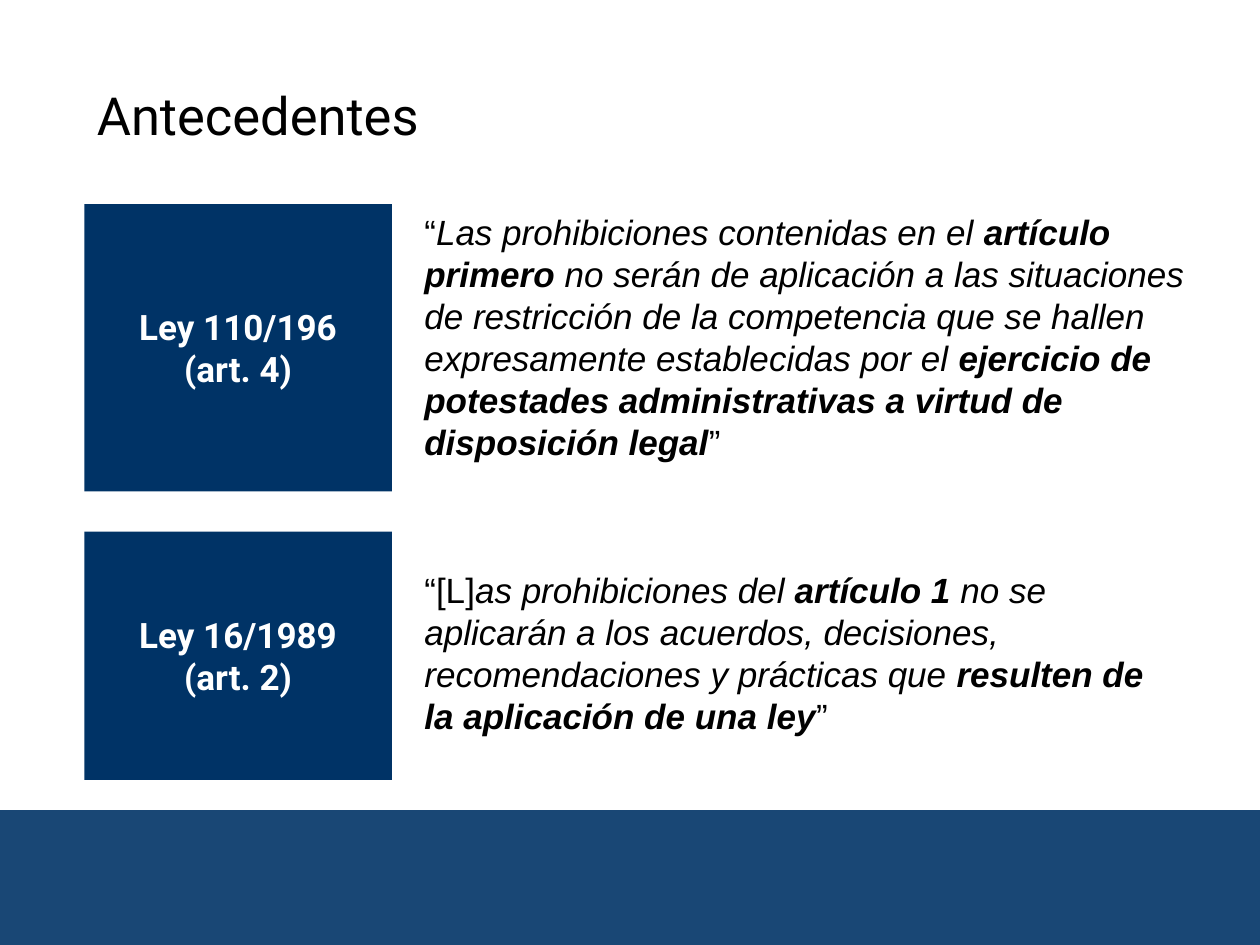
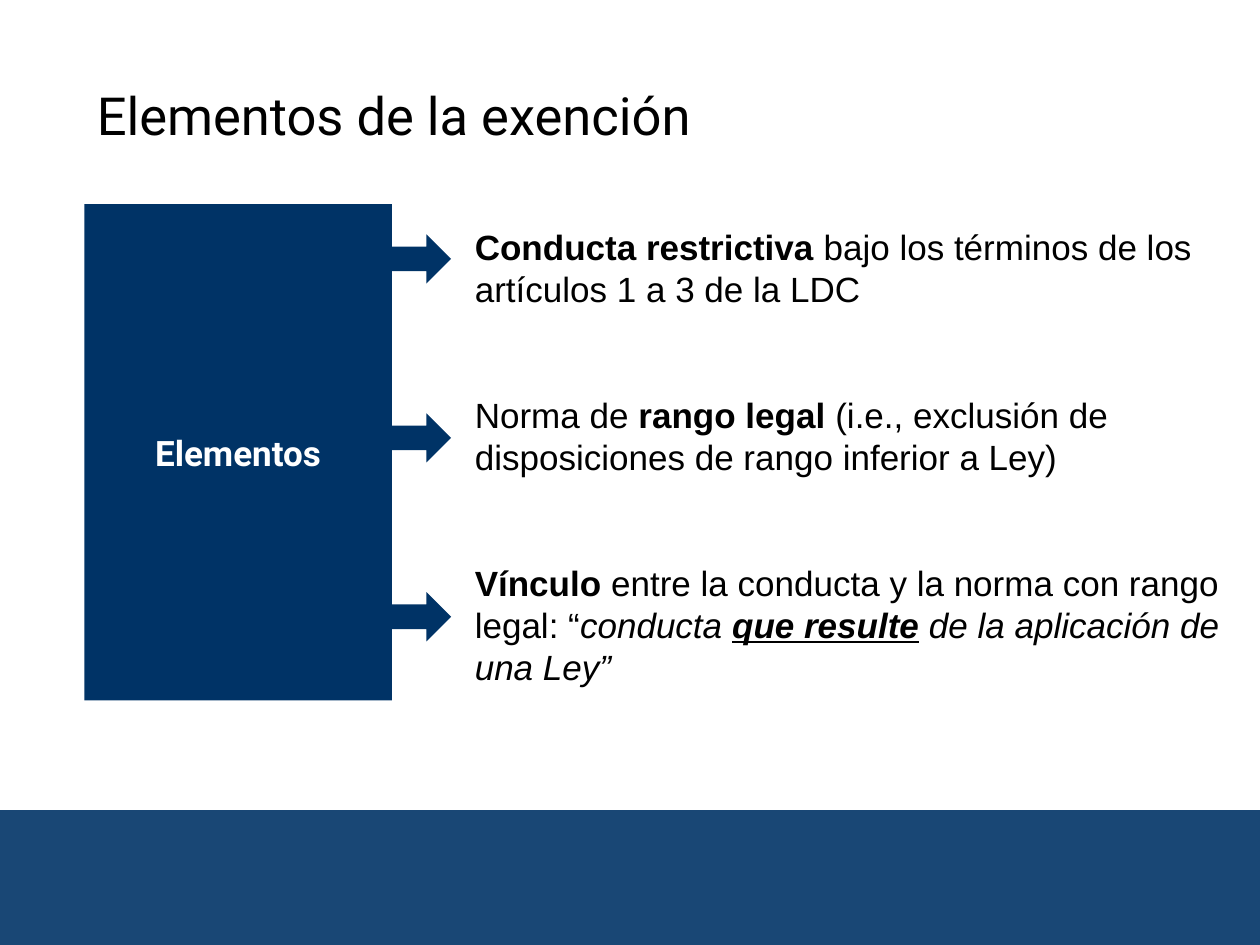
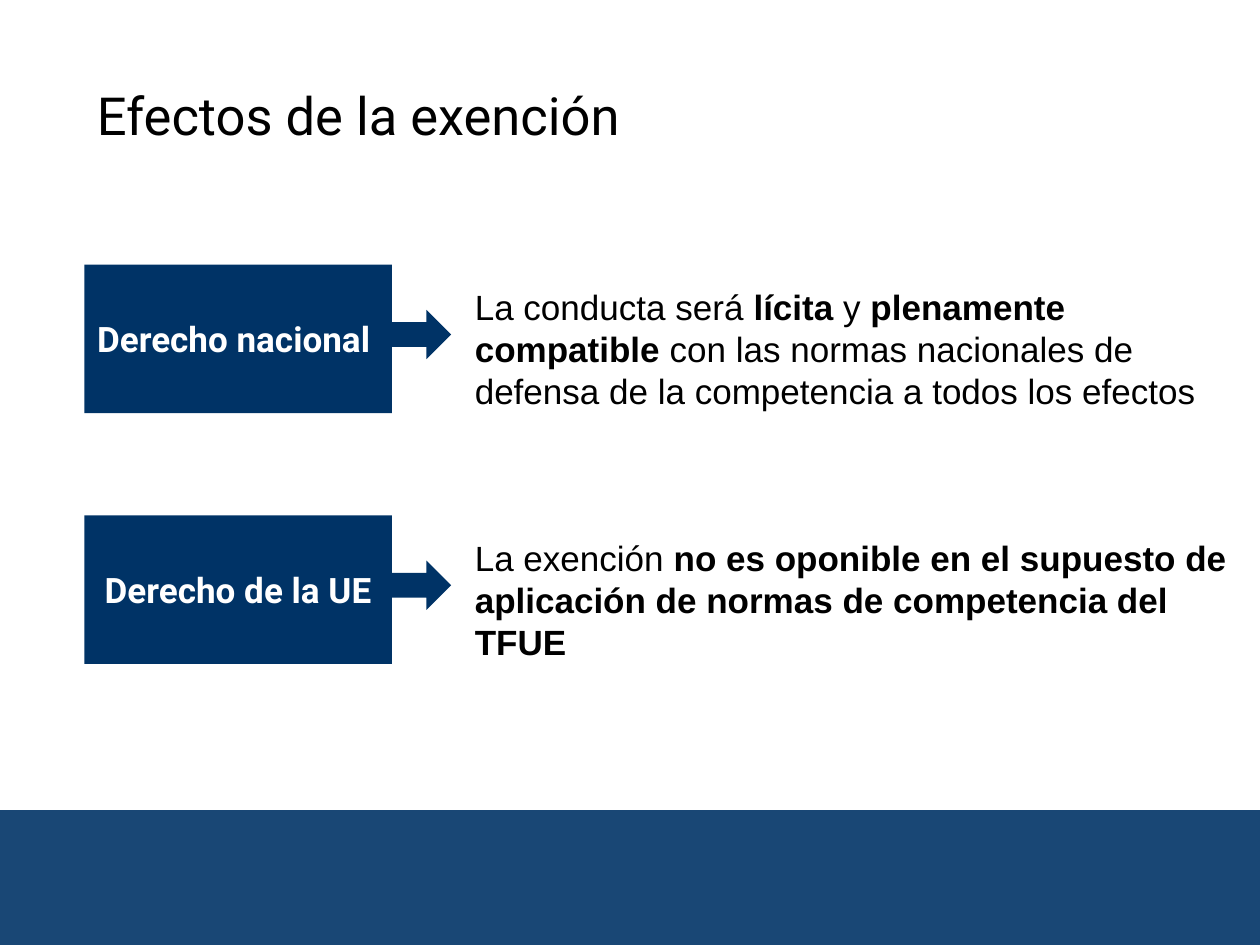
from lxml import etree
from pptx import Presentation
from pptx.dml.color import RGBColor
from pptx.enum.shapes import MSO_SHAPE
from pptx.enum.text import MSO_ANCHOR, MSO_AUTO_SIZE, PP_ALIGN
from pptx.oxml.ns import qn
from pptx.util import Inches, Pt

RECT = MSO_SHAPE.RECTANGLE
ARROW = MSO_SHAPE.RIGHT_ARROW
MIDDLE = MSO_ANCHOR.MIDDLE
GROW = MSO_AUTO_SIZE.SHAPE_TO_FIT_TEXT
LEFT, CENTER = PP_ALIGN.LEFT, PP_ALIGN.CENTER

NAVY, BLACK, WHITE = "003366", "000000", "FFFFFF"
HEAD, BODY = "Roboto", "Arial"
EDGE = 0.67      # left edge of titles and boxes
WIDE = 2.44      # box width
TEXT = 3.27      # left edge of the text column


def color(code):
    return RGBColor.from_string(code)


class Deck:
    def __init__(self):
        self.prs = Presentation()
        self.prs.slide_width = Inches(10)
        self.prs.slide_height = Inches(7.5)
        self.slide = None

    def page(self, title):
        """Start a slide with its band and title."""
        self.slide = self.prs.slides.add_slide(self.prs.slide_layouts[6])
        band = self.shape(RECT, 0, 6.43, 10, 1.07)
        fill = band.fill._xPr.find(qn("a:solidFill"))
        etree.SubElement(fill[0], qn("a:alpha")).set("val", "90000")
        frame = self.frame(EDGE, 0.36, 9.76, 1.1)
        frame.vertical_anchor = MIDDLE
        self.run(frame.paragraphs[0], title, HEAD, 30, BLACK)

    def shape(self, kind, x, y, w, h):
        item = self.slide.shapes.add_shape(
            kind, Inches(x), Inches(y), Inches(w), Inches(h))
        item.shadow.inherit = False
        item.fill.solid()
        item.fill.fore_color.rgb = color(NAVY)
        item.line.fill.background()
        return item

    def frame(self, x, y, w, h):
        box = self.slide.shapes.add_textbox(
            Inches(x), Inches(y), Inches(w), Inches(h))
        box.text_frame.word_wrap = True
        return box.text_frame

    def run(self, para, text, font, size, ink, style=""):
        """Add a run; style letters are b, i and u."""
        run = para.add_run()
        run.text = text
        run.font.name = font
        run.font.size = Pt(size)
        run.font.color.rgb = color(ink)
        run.font.bold = "b" in style
        run.font.italic = "i" in style
        run.font.underline = "u" in style

    def lines(self, frame, count):
        """Yield the first paragraph, then new ones."""
        yield frame.paragraphs[0]
        for _ in range(count - 1):
            yield frame.add_paragraph()

    def label(self, y, h, *texts):
        frame = self.shape(RECT, EDGE, y, WIDE, h).text_frame
        frame.word_wrap = True
        frame.vertical_anchor = MIDDLE
        for para, text in zip(self.lines(frame, len(texts)), texts):
            para.alignment = CENTER
            self.run(para, text, HEAD, 20, WHITE, "b")

    def arrow(self, y):
        self.shape(ARROW, 3.03, y, 0.55, 0.39)

    def body(self, x, y, w, h, *paras, indent=0.4, after=6, gap=42):
        frame = self.frame(x, y, w, h)
        frame.auto_size = GROW
        for n, para in enumerate(self.lines(frame, len(paras))):
            props = para._p.get_or_add_pPr()
            props.set("marL", str(Inches(indent)))
            props.set("indent", "0")
            para.alignment = LEFT
            para.space_before = Pt(gap if n else 0)
            para.space_after = Pt(after)
            for text, style in paras[n]:
                self.run(para, text, BODY, 20, BLACK, style)


def main():
    deck = Deck()

    # Background laws
    deck.page("Antecedentes")
    deck.label(1.62, 2.28, "Ley 110/196", "(art. 4)")
    deck.body(TEXT, 1.62, 6.46, 2.12, [
        ("“", ""),
        ("Las prohibiciones contenidas en el ", "i"),
        ("artículo primero ", "bi"),
        ("no serán de aplicación a las situaciones de restricción de la "
         "competencia que se hallen expresamente establecidas por el ", "i"),
        ("ejercicio de potestades administrativas a virtud de "
         "disposición legal", "bi"),
        ("”", ""),
    ], indent=0, after=0)
    deck.label(4.22, 1.97, "Ley 16/1989", "(art. 2)")
    deck.body(2.87, 4.46, 6.46, 1.45, [
        ("“[L]", ""),
        ("as prohibiciones del ", "i"),
        ("artículo 1", "bi"),
        (" no se aplicarán a los acuerdos, decisiones, recomendaciones "
         "y prácticas que ", "i"),
        ("resulten de la aplicación de una ley", "bi"),
        ("”", ""),
    ])

    # Elements of the exemption
    deck.page("Elementos de la exención")
    deck.label(1.62, 3.94, "Elementos")
    deck.body(
        TEXT, 1.74, 6.73, 3.8,
        [("Conducta restrictiva ", "b"),
         ("bajo los términos de los artículos 1 a 3 de la LDC", "")],
        [("Norma de ", ""),
         ("rango legal ", "b"),
         ("(i.e., exclusión de disposiciones de rango inferior a Ley)", "")],
        [("Vínculo", "b"),
         (" entre la conducta y la norma con rango legal: “", ""),
         ("conducta ", "i"),
         ("que resulte", "biu"),
         (" ", "bi"),
         ("de la aplicación de una Ley”", "i")])
    for n in range(3):
        deck.arrow(1.86 + 1.42 * n)

    # Effects in each legal order
    deck.page("Efectos de la exención")
    effects = [
        ("Derecho nacional ", [
            ("La conducta será ", ""),
            ("lícita", "b"),
            (" y ", ""),
            ("plenamente compatible ", "b"),
            ("con las normas nacionales de defensa de la competencia "
             "a todos los efectos", "")]),
        ("Derecho de la UE", [
            ("La exención ", ""),
            ("no es oponible en el supuesto de aplicación de normas de "
             "competencia del TFUE", "b")]),
    ]
    for n, (name, runs) in enumerate(effects):
        top = 2.1 + 1.99 * n
        deck.label(top, 1.18, name)
        deck.body(TEXT, top + 0.12, 6.73, 1.11, runs)
        deck.arrow(top + 0.36)

    deck.prs.save("out.pptx")


if __name__ == "__main__":
    main()
